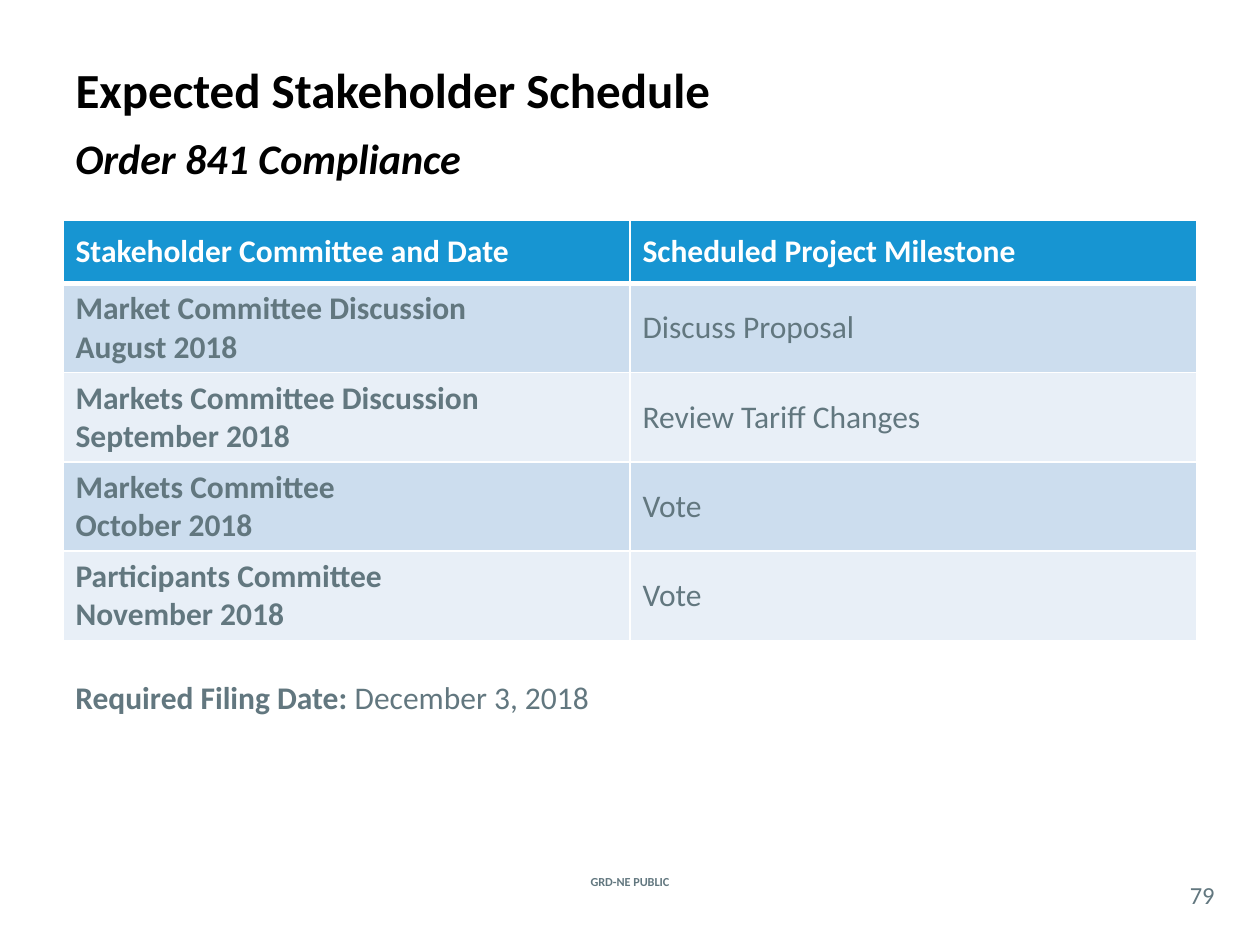
import pptx
import pptx.util
import pptx.dml.color
import pptx.enum.text
import pptx.oxml
import pptx.oxml.ns

Pt = pptx.util.Pt
ALIGN = pptx.enum.text.PP_ALIGN
ANCHOR = pptx.enum.text.MSO_ANCHOR

# Content
TITLE = "Expected Stakeholder Schedule"
SUBTITLE = "Order 841 Compliance"
HEADINGS = ["Stakeholder Committee and Date", "Scheduled Project Milestone"]
MILESTONES = [
    (["Market Committee Discussion", "August 2018"], "Discuss Proposal"),
    (["Markets Committee Discussion", "September 2018"], "Review Tariff Changes"),
    (["Markets Committee", "October 2018"], "Vote"),
    (["Participants Committee", "November 2018"], "Vote"),
]
FILING_LABEL, FILING_DATE = "Required Filing Date: ", "December 3, 2018"
FOOTER = "GRD-NE PUBLIC"
PAGE = "79"

COLORS = {
    "black": "000000", "white": "FFFFFF", "slate": "62777F",
    "header": "1795D2", "dark band": "CCDDEE", "light band": "E8EFF7",
}
LEFT, WIDTH = 36, 648
HEADER_HEIGHT, ROW_HEIGHT = 36, 51
THIN, THICK = 1, 3


def rgb(color):
    return pptx.dml.color.RGBColor.from_string(COLORS[color])


def add_run(paragraph, text, size, color, bold=False, italic=False):
    run = paragraph.add_run()
    run.text = text
    run.font.name = "Calibri"
    run.font.size = Pt(size)
    run.font.bold = bold
    run.font.italic = italic
    run.font.color.rgb = rgb(color)


def add_text_box(left, top, width, height, align=ALIGN.LEFT, anchor=ANCHOR.TOP):
    box = slide.shapes.add_textbox(Pt(left), Pt(top), Pt(width), Pt(height))
    frame = box.text_frame
    frame.word_wrap = True
    frame.vertical_anchor = anchor
    frame.paragraphs[0].alignment = align
    return frame


def fill_cell(cell, lines, fill, color, bold, top_line=THIN, bottom_line=THIN):
    borders = {"L": THIN, "R": THIN, "T": top_line, "B": bottom_line}
    properties = cell._tc.get_or_add_tcPr()
    for side, weight in borders.items():
        properties.append(pptx.oxml.parse_xml(
            f'<a:ln{side} {pptx.oxml.ns.nsdecls("a")} w="{Pt(weight)}">'
            f'<a:solidFill><a:srgbClr val="{COLORS["white"]}"/></a:solidFill>'
            f'</a:ln{side}>'))
    cell.fill.solid()
    cell.fill.fore_color.rgb = rgb(fill)
    cell.vertical_anchor = ANCHOR.MIDDLE
    frame = cell.text_frame
    for number, line in enumerate(lines):
        paragraph = frame.add_paragraph() if number else frame.paragraphs[0]
        add_run(paragraph, line, 18, color, bold)


presentation = pptx.Presentation()
presentation.slide_width, presentation.slide_height = Pt(720), Pt(540)
slide = presentation.slides.add_slide(presentation.slide_layouts[5])

# Title and subtitle
title = slide.shapes.title
title.left, title.top, title.width, title.height = Pt(LEFT), Pt(30), Pt(WIDTH), Pt(42)
title.text_frame.vertical_anchor = ANCHOR.MIDDLE
title.text_frame.paragraphs[0].alignment = ALIGN.LEFT
add_run(title.text_frame.paragraphs[0], TITLE, 28, "black", bold=True)

subtitle = add_text_box(LEFT, 72, WIDTH, 36)
add_run(subtitle.paragraphs[0], SUBTITLE, 24, "black", bold=True, italic=True)

# Schedule table
schedule = slide.shapes.add_table(
    len(MILESTONES) + 1, len(HEADINGS), Pt(LEFT), Pt(126), Pt(WIDTH),
    Pt(HEADER_HEIGHT + ROW_HEIGHT * len(MILESTONES))).table
for column in schedule.columns:
    column.width = Pt(WIDTH / len(HEADINGS))
for index, row in enumerate(schedule.rows):
    row.height = Pt(ROW_HEIGHT if index else HEADER_HEIGHT)

for column, heading in enumerate(HEADINGS):
    fill_cell(schedule.cell(0, column), [heading], "header", "white", True,
              bottom_line=THICK)
for row, (committee, milestone) in enumerate(MILESTONES, start=1):
    band = "dark band" if row % 2 else "light band"
    top_line = THICK if row == 1 else THIN
    fill_cell(schedule.cell(row, 0), committee, band, "slate", True, top_line)
    fill_cell(schedule.cell(row, 1), [milestone], band, "slate", False, top_line)

# Filing date
filing = add_text_box(LEFT, 384, 311, 29)
add_run(filing.paragraphs[0], FILING_LABEL, 18, "slate", bold=True)
add_run(filing.paragraphs[0], FILING_DATE, 18, "slate")

# Footer and page number
footer = add_text_box(307, 498, 106, 12, ALIGN.CENTER, ANCHOR.MIDDLE)
add_run(footer.paragraphs[0], FOOTER, 7, "slate", bold=True)

page = add_text_box(672, 501, 30, 21, ALIGN.CENTER, ANCHOR.MIDDLE)
page.margin_left = page.margin_right = page.margin_top = page.margin_bottom = 0
add_run(page.paragraphs[0], PAGE, 14, "slate")

presentation.save("out.pptx")
